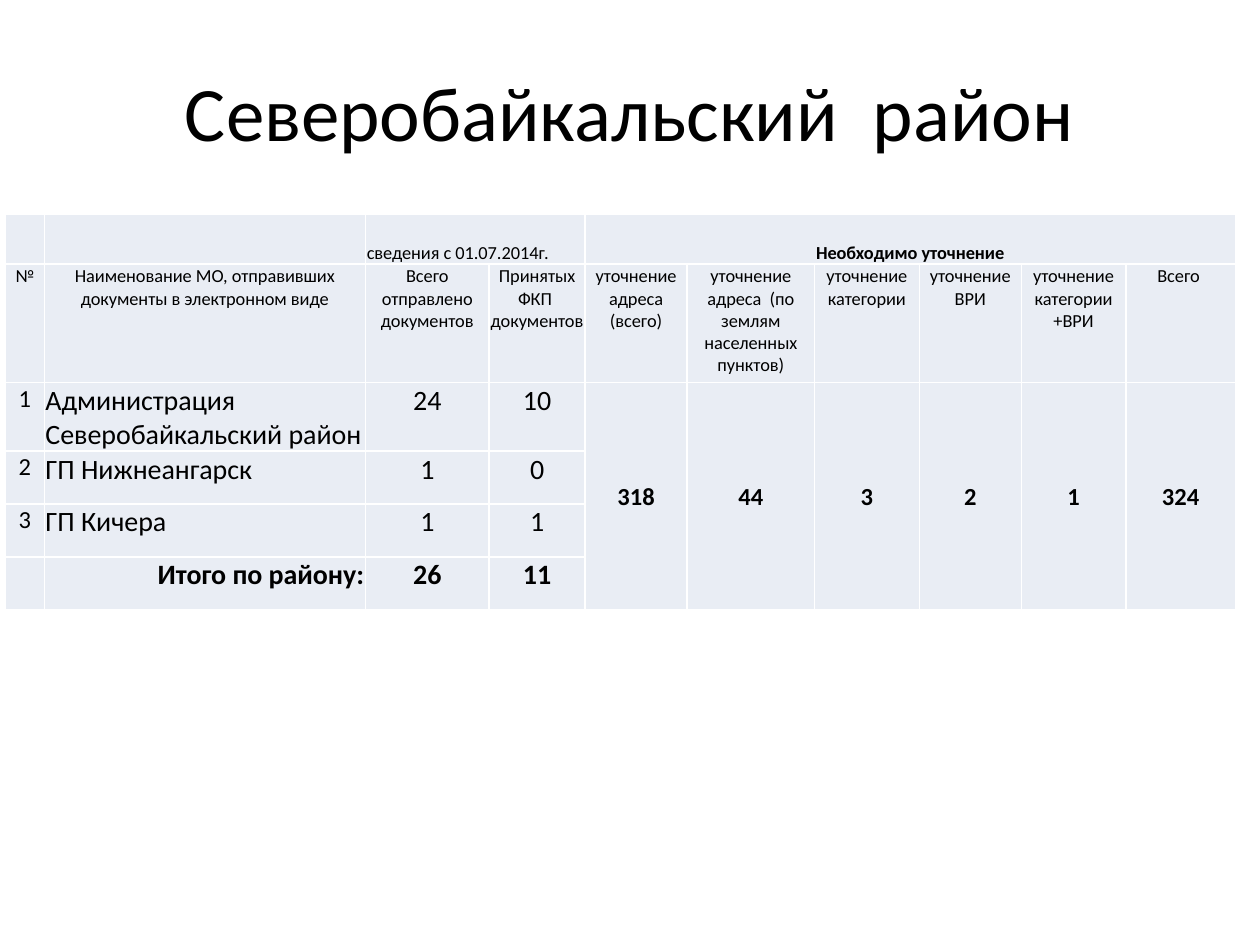
from lxml.etree import SubElement
from pptx import Presentation
from pptx.dml.color import RGBColor
from pptx.enum.text import MSO_ANCHOR, PP_ALIGN
from pptx.oxml.ns import qn
from pptx.util import Pt

LEFT, MID, RIGHT = PP_ALIGN.LEFT, PP_ALIGN.CENTER, PP_ALIGN.RIGHT


def hue(code):
    return RGBColor.from_string(code)


def apply(obj, form):
    for name, value in form.items():
        setattr(obj, name, value)


class Deck:
    face, ink, pale, white = "Calibri", "000000", "E9EDF4", "FFFFFF"
    inset = {"margin_left": Pt(0.72), "margin_right": Pt(0.72),
             "margin_top": Pt(0.72), "margin_bottom": 0}

    def __init__(self, wide, high):
        self.show = Presentation()
        apply(self.show, {"slide_width": Pt(wide), "slide_height": Pt(high)})
        self.slide = self.show.slides.add_slide(self.show.slide_layouts[6])

    def label(self, frame, text, size, bold=False, align=MID):
        para = frame.paragraphs[0]
        para.alignment = align
        run = para.add_run()
        run.text = text
        apply(run.font, {"name": self.face, "size": Pt(size), "bold": bold})
        run.font.color.rgb = hue(self.ink)

    def title(self, text, box, size):
        frame = self.slide.shapes.add_textbox(*map(Pt, box)).text_frame
        apply(frame, {"word_wrap": True, "vertical_anchor": MSO_ANCHOR.MIDDLE})
        self.label(frame, text, size)

    def grid(self, left, top, cols, rows):
        frame = self.slide.shapes.add_table(
            len(rows), len(cols), Pt(left), Pt(top), Pt(sum(cols)), Pt(sum(rows)))
        table = frame.table
        apply(table, {"first_row": False, "horz_banding": False})
        for col, wide in zip(table.columns, cols):
            col.width = Pt(wide)
        for row, high in zip(table.rows, rows):
            row.height = Pt(high)
        for cell in table.iter_cells():
            apply(cell, self.inset)
            self.edge(cell)
            cell.fill.solid()
            cell.fill.fore_color.rgb = hue(self.pale)
        return table

    def edge(self, cell):
        props = cell._tc.get_or_add_tcPr()
        for side in ("a:lnL", "a:lnR", "a:lnT", "a:lnB"):
            line = SubElement(props, qn(side), w=str(Pt(1)))
            fill = SubElement(line, qn("a:solidFill"))
            SubElement(fill, qn("a:srgbClr"), val=self.white)

    def cell(self, cell, text, size, bold=False, align=MID, anchor=MSO_ANCHOR.TOP):
        cell.vertical_anchor = anchor
        self.label(cell.text_frame, text, size, bold, align)

    def save(self):
        self.show.save("out.pptx")


HEADS = ["№", "Наименование МО, отправивших документы в электронном виде",
         "Всего отправлено документов", "Принятых ФКП  документов",
         "уточнение адреса (всего)",
         "уточнение адреса  (по землям населенных пунктов)",
         "уточнение категории", "уточнение ВРИ",
         "уточнение категории +ВРИ", "Всего "]
TOWNS = [("1", "Администрация Северобайкальский район", "24", "10"),
         ("2", "ГП Нижнеангарск", "1", "0"),
         ("3", "ГП Кичера", "1", "1"),
         ("", "Итого по району:", "26", "11")]
NEEDS = ["318", "44", "3", "2", "1", "324"]


def main():
    deck = Deck(720, 540)
    deck.title("Северобайкальский  район", (54, 15.1, 612, 96.5), 44)
    table = deck.grid(3.2, 122.6,
                      [22.1, 183.6, 70.6, 54.9, 58.3, 72.9, 59.8, 58.3, 59.8, 62.6],
                      [28.4, 67.7] + [30.2] * 4)

    # Top band
    for first, last, text, bold, align in [
            (2, 3, "сведения с 01.07.2014г.", False, LEFT),
            (4, 9, "Необходимо уточнение", True, MID)]:
        cell = table.cell(0, first)
        cell.merge(table.cell(0, last))
        deck.cell(cell, text, 10.5, bold, align, MSO_ANCHOR.BOTTOM)

    # Column heads
    for col, text in enumerate(HEADS):
        deck.cell(table.cell(1, col), text, 10.5)

    # Towns and their total
    for row, town in enumerate(TOWNS, 2):
        total = not town[0]
        for col, text in enumerate(town):
            if text:
                align = MID if col != 1 else RIGHT if total else LEFT
                deck.cell(table.cell(row, col), text, 16 if col else 14, total, align)

    # Counts shared by all towns
    for col, text in enumerate(NEEDS, 4):
        cell = table.cell(2, col)
        cell.merge(table.cell(5, col))
        deck.cell(cell, text, 14, True, anchor=MSO_ANCHOR.MIDDLE)

    deck.save()


if __name__ == "__main__":
    main()
